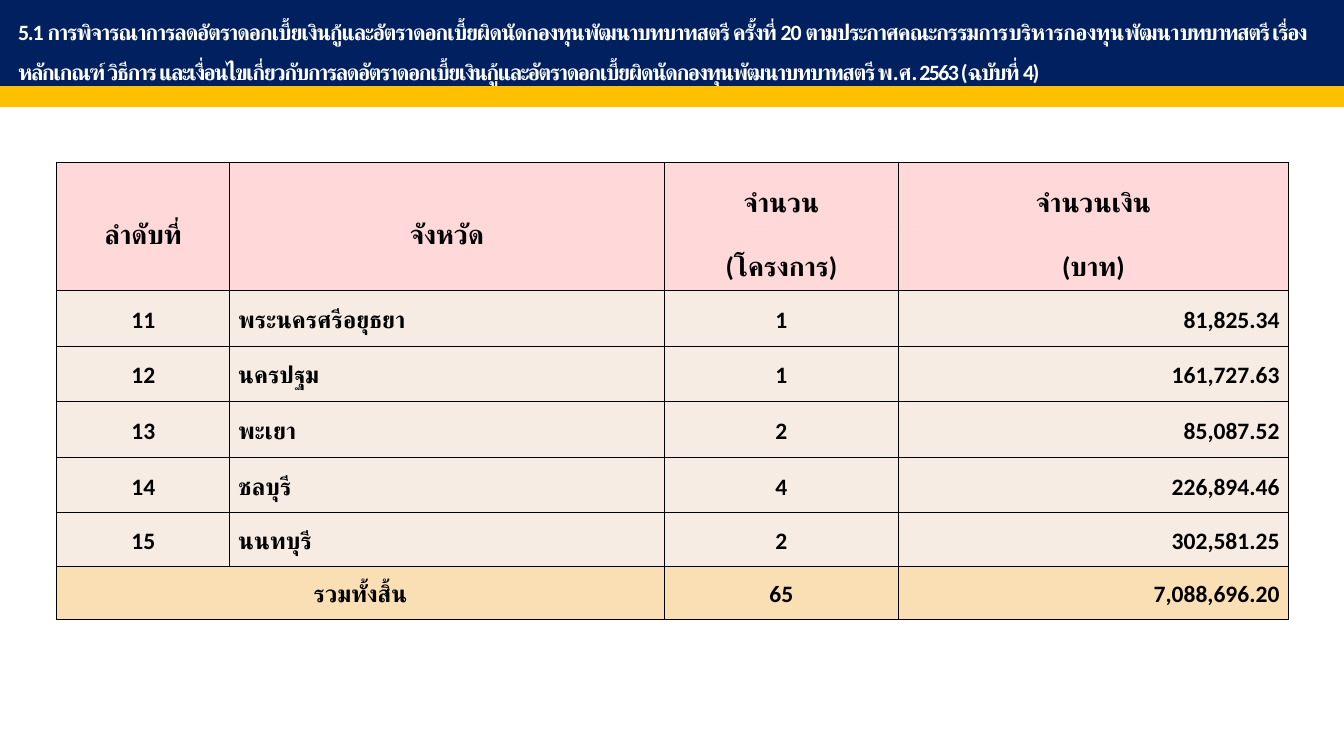
from dataclasses import dataclass

from lxml import etree
from pptx import Presentation
from pptx import util as u
from pptx.dml.color import RGBColor
from pptx.enum import shapes, text
from pptx.oxml import ns


@dataclass(frozen=True)
class Theme:
    font: str = "Calibri"
    navy: str = "002060"
    gold: str = "FFC000"
    white: str = "FFFFFF"
    black: str = "000000"
    header_fill: tuple = ("FFC9C9", 70)
    body_fill: tuple = ("F4E8DC", 80)
    total_fill: tuple = ("F9D8A3", 80)
    title_size: float = 13
    header_size: float = 16
    body_size: float = 14
    border: float = 0.5


LEFT, CENTER, RIGHT = (text.PP_ALIGN.LEFT, text.PP_ALIGN.CENTER, text.PP_ALIGN.RIGHT)


def write(frame, content, *, font, size, color, align=LEFT, line_spacing=1.0):
    """Fill a frame with one bold paragraph of (text, letter spacing) runs."""
    frame.word_wrap = True
    frame.vertical_anchor = text.MSO_ANCHOR.MIDDLE
    paragraph = frame.paragraphs[0]
    paragraph.alignment = align
    paragraph.line_spacing = line_spacing
    runs = [(content, 0)] if isinstance(content, str) else content
    for words, spacing in runs:
        run = paragraph.add_run()
        run.text = words
        run.font.name = font
        run.font.size = u.Pt(size)
        run.font.bold = True
        run.font.color.rgb = RGBColor.from_string(color)
        properties = run.font._element
        etree.SubElement(properties, ns.qn("a:cs"), typeface=font)
        if spacing:
            properties.set("spc", str(round(spacing * 100)))


class SlideBuilder:
    """Holds the theme and the slide; lengths are percentages of the slide."""

    def __init__(self, presentation, theme):
        self.theme = theme
        self.width = presentation.slide_width
        self.height = presentation.slide_height
        self.slide = presentation.slides.add_slide(presentation.slide_layouts[5])

    def x(self, share):
        return round(self.width * share / 100)

    def y(self, share):
        return round(self.height * share / 100)

    def box(self, left, top, width, height):
        return self.x(left), self.y(top), self.x(width), self.y(height)

    def band(self, color, *place):
        shape = self.slide.shapes.add_shape(shapes.MSO_SHAPE.RECTANGLE, *self.box(*place))
        shape.shadow.inherit = False
        shape.fill.solid()
        shape.fill.fore_color.rgb = RGBColor.from_string(color)
        shape.line.color.rgb = RGBColor.from_string(color)
        shape.line.width = u.Pt(1)

    def title(self, runs, *place):
        shape = self.slide.shapes.title
        shape.left, shape.top, shape.width, shape.height = self.box(*place)
        shape.text_frame.auto_size = text.MSO_AUTO_SIZE.NONE
        write(shape.text_frame, runs, font=self.theme.font, size=self.theme.title_size,
              color=self.theme.white, line_spacing=1.5)
        # Bring the title in front of the band
        self.slide.shapes._spTree.append(shape._element)

    def table(self, left, top, columns, rows):
        place = self.box(left, top, sum(columns), sum(rows))
        table = self.slide.shapes.add_table(len(rows), len(columns), *place).table
        table.first_row = table.horz_banding = False
        for column, share in zip(table.columns, columns):
            column.width = self.x(share)
        for row, share in zip(table.rows, rows):
            row.height = self.y(share)
        return table

    def cell(self, cell, content, fill, *, size, align, line_spacing, margins, open_side=None):
        color, opacity = fill
        cell.fill.solid()
        cell.fill.fore_color.rgb = RGBColor.from_string(color)
        properties = cell._tc.tcPr
        srgb = properties.find(".//" + ns.qn("a:srgbClr"))
        etree.SubElement(srgb, ns.qn("a:alpha"), val=str(opacity * 1000))
        for index, side in enumerate("LRTB"):
            line = etree.Element(ns.qn(f"a:ln{side}"), w=str(u.Pt(self.theme.border)))
            if side == open_side:
                etree.SubElement(line, ns.qn("a:noFill"))
            else:
                solid = etree.SubElement(line, ns.qn("a:solidFill"))
                etree.SubElement(solid, ns.qn("a:srgbClr"), val=self.theme.black)
            properties.insert(index, line)
        cell.margin_left = cell.margin_right = u.Inches(margins[0])
        cell.margin_top, cell.margin_bottom = u.Inches(margins[1]), 0
        cell.vertical_anchor = text.MSO_ANCHOR.MIDDLE
        if content:
            frame = cell.text_frame
            write(frame, content, font=self.theme.font, size=size, color=self.theme.black,
                  align=align, line_spacing=line_spacing)


HEADING = [
    ("5.1 การพิจารณาการลดอัตราดอกเบี้ยเงินกู้และอัตราดอกเบี้ยผิดนัดกองทุนพัฒนาบทบาทสตรี "
     "ครั้งที่ 20 ตามประกาศคณะกรรมการ", -0.7),
    ("บริหารกองทุน", -0.4),
    ("พัฒนา", -0.6),
    ("บทบาทสตรี เรื่อง หลักเกณฑ์ วิธีการ และเงื่อนไขเกี่ยวกับการลดอัตราดอกเบี้ยเงินกู้"
     "และอัตราดอกเบี้ยผิดนัดกองทุนพัฒนาบทบาทสตรี พ.ศ. 2563 (ฉบับที่ 4)", -0.9),
]
HEADER = [
    ("ลำดับที่", "จังหวัด", "จำนวน", "จำนวนเงิน"),
    ("", "", "(โครงการ)", "(บาท)"),
]
PROVINCES = [
    ("11", "พระนครศรีอยุธยา", "1", "81,825.34"),
    ("12", "นครปฐม", "1", "161,727.63"),
    ("13", "พะเยา", "2", "85,087.52"),
    ("14", "ชลบุรี", "4", "226,894.46"),
    ("15", "นนทบุรี", "2", "302,581.25"),
]
TOTAL = ("รวมทั้งสิ้น", "", "65", "7,088,696.20")


def main():
    presentation = Presentation()
    presentation.slide_width = u.Inches(11.11)
    presentation.slide_height = u.Inches(6.25)
    theme = Theme()
    builder = SlideBuilder(presentation, theme)

    # Table of provinces
    columns = (12.87, 32.31, 17.46, 28.98)
    rows = (8.48,) * 2 + (7.36,) * 4 + (7.04,) * 2
    table = builder.table(4.23, 21.44, columns, rows)
    for column in range(2):
        table.cell(0, column).merge(table.cell(1, column))
    table.cell(len(rows) - 1, 0).merge(table.cell(len(rows) - 1, 1))

    # Header rows: the two-line headings have no rule between their lines
    for row, labels in enumerate(HEADER):
        for column, label in enumerate(labels):
            builder.cell(table.cell(row, column), label, theme.header_fill,
                         size=theme.header_size, align=CENTER, line_spacing=1.5,
                         margins=(0.01, 0.01), open_side="BT"[row] if column > 1 else None)

    # Province rows and total
    for row, values in enumerate(PROVINCES + [TOTAL], start=len(HEADER)):
        is_total = values is TOTAL
        fill = theme.total_fill if is_total else theme.body_fill
        aligns = (CENTER, LEFT, CENTER, RIGHT)
        for column, (value, align) in enumerate(zip(values, aligns)):
            builder.cell(table.cell(row, column), value, fill, size=theme.body_size,
                         align=align, line_spacing=1.15, margins=(0.07, 0))

    # Heading bands and title
    builder.band(theme.navy, -0.09, -0.16, 100, 12)
    builder.title(HEADING, 0.45, 0.48, 99.1, 11.04)
    builder.band(theme.gold, 0, 11.52, 100, 2.56)

    presentation.save("out.pptx")


if __name__ == "__main__":
    main()
